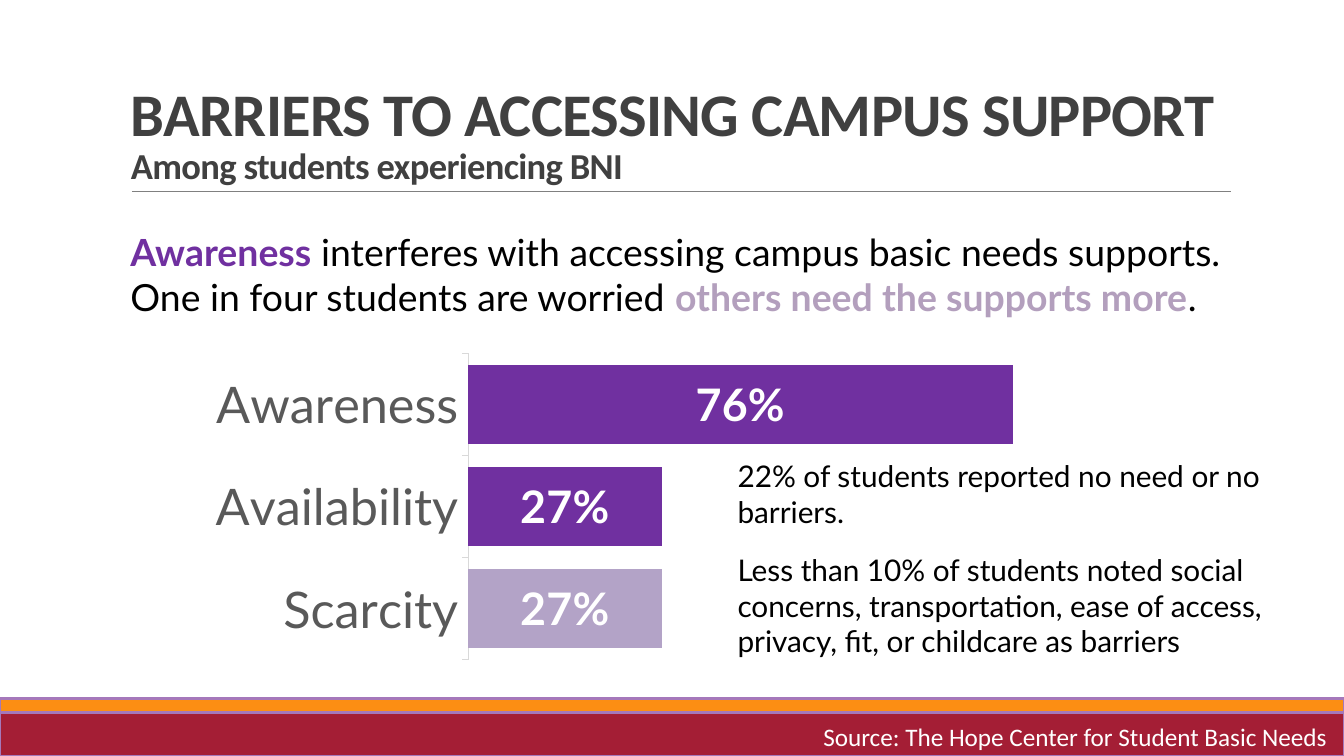
"""Build the slide on barriers to accessing campus support."""
from lxml import etree
from pptx import Presentation
from pptx.chart.data import CategoryChartData
from pptx.dml.color import RGBColor
from pptx.enum.chart import XL_CHART_TYPE, XL_LABEL_POSITION, XL_TICK_LABEL_POSITION, XL_TICK_MARK
from pptx.enum.shapes import MSO_CONNECTOR, MSO_SHAPE
from pptx.enum.text import MSO_ANCHOR
from pptx.oxml.ns import qn
from pptx.util import Pt

BAR_CLUSTERED = XL_CHART_TYPE.BAR_CLUSTERED
LABEL_CENTER = XL_LABEL_POSITION.CENTER
TICK_OUTSIDE = XL_TICK_MARK.OUTSIDE
TICK_NONE = XL_TICK_MARK.NONE
NO_TICK_LABELS = XL_TICK_LABEL_POSITION.NONE
STRAIGHT = MSO_CONNECTOR.STRAIGHT
RECTANGLE = MSO_SHAPE.RECTANGLE
BOTTOM = MSO_ANCHOR.BOTTOM

PURPLE = "7030A0"
BLACK = "000000"
WHITE = "FFFFFF"


def color(value):
    """Turn a hex string into a colour."""
    return RGBColor.from_string(value)


def add_text(left, top, width, height, paragraphs, size, font, wrap=True):
    """Add a text box whose paragraphs are lists of (text, colour, bold)."""
    box = page.shapes.add_textbox(Pt(left), Pt(top), Pt(width), Pt(height))
    frame = box.text_frame
    frame.word_wrap = wrap
    for index, spans in enumerate(paragraphs):
        para = frame.paragraphs[0] if index == 0 else frame.add_paragraph()
        for text, hue, bold in spans:
            span = para.add_run()
            span.text = text
            span.font.size = Pt(size)
            span.font.name = font
            span.font.bold = bold
            span.font.color.rgb = color(hue)
    return frame


deck = Presentation()
deck.slide_width = Pt(960)
deck.slide_height = Pt(540)
page = deck.slides.add_slide(deck.slide_layouts[6])

for top, height, fill in [(508.3, 31.7, "A41E35"), (499, 9.8, "FC8E13")]:
    band = page.shapes.add_shape(RECTANGLE, Pt(0), Pt(top), Pt(960), Pt(height))
    band.shadow.inherit = False
    band.fill.solid()
    band.fill.fore_color.rgb = color(fill)
    band.line.color.rgb = color("A578BA")
    band.line.width = Pt(2)

rule = page.shapes.add_connector(STRAIGHT, Pt(94.3), Pt(136.8), Pt(879), Pt(136.8))
rule.line.color.rgb = color("808080")
rule.line.width = Pt(0.5)
etree.SubElement(rule._element.spPr, qn("a:effectLst"))

title = add_text(86.4, 22.3, 792, 114.5, [
    [("BARRIERS TO ACCESSING CAMPUS SUPPORT", "404040", True)],
    [("Among students experiencing BNI", "404040", True)],
], 43.2, "Calibri")
title.vertical_anchor = BOTTOM
title.paragraphs[1].runs[0].font.size = Pt(26.1)
for para in title.paragraphs:
    para.line_spacing = 0.85
    para.runs[0].font._element.set("spc", "-50")

summary = add_text(83.5, 159, 890.6, 74, [
    [("Awareness", PURPLE, True),
     (" interferes with accessing campus basic needs supports.", BLACK, False)],
    [("One in four students are worried ", BLACK, False),
     ("others need the supports more", "B39FBD", True), (".", BLACK, False)],
], 26.7, "Lato")
summary.margin_left = summary.margin_right = Pt(9.6)
summary.margin_top = summary.margin_bottom = Pt(4.8)

barriers = CategoryChartData(number_format="0%")
barriers.categories = ["Scarcity", "Availability", "Awareness"]
barriers.add_series("Series 1", [0.27, 0.27, 0.76])
chart = page.shapes.add_chart(
    BAR_CLUSTERED, Pt(141.8), Pt(247.7), Pt(614.2), Pt(228.2), barriers).chart
chart.has_legend = False
chart.has_title = False
chart.font.name = "Lato"
chart.font.size = Pt(36)
chart.font.color.rgb = color(BLACK)

category_axis = chart.category_axis
category_axis.major_tick_mark = TICK_OUTSIDE
category_axis.has_major_gridlines = False
category_axis.format.line.color.rgb = color("D9D9D9")
category_axis.format.line.width = Pt(0.75)
category_axis.tick_labels.font.name = "Lato"
category_axis.tick_labels.font.size = Pt(36)
category_axis.tick_labels.font.color.rgb = color("595959")

value_axis = chart.value_axis
value_axis.minimum_scale = 0
value_axis.maximum_scale = 0.8
value_axis.has_major_gridlines = False
value_axis.major_tick_mark = TICK_NONE
value_axis.tick_label_position = NO_TICK_LABELS
value_axis.visible = False

plot = chart.plots[0]
plot.gap_width = 30
plot.vary_by_categories = False
bars = plot.series[0]
bars.format.fill.solid()
bars.format.fill.fore_color.rgb = color(PURPLE)
scarcity = bars.points[0].format.fill
scarcity.solid()
scarcity.fore_color.rgb = color("B3A3C7")
labels = bars.data_labels
labels.show_value = True
labels.number_format = "0%"
labels.number_format_is_linked = False
labels.position = LABEL_CENTER
labels.font.name = "Lato"
labels.font.size = Pt(32)
labels.font.bold = True
labels.font.color.rgb = color(WHITE)

remarks = add_text(519.8, 323.3, 420.5, 152.6, [
    [("22% of students reported no need or no barriers.", BLACK, False)],
    [("Less than 10% of students noted social concerns, transportation, "
      "ease of access, privacy, fit, or childcare as barriers", BLACK, False)],
], 21.3, "Lato")
remarks.paragraphs[1].space_before = Pt(16)

add_text(581, 512, 378.7, 28.8, [
    [("Source: The Hope Center for Student Basic Needs", WHITE, False)],
], 18, "Calibri", wrap=False)

deck.save("out.pptx")
